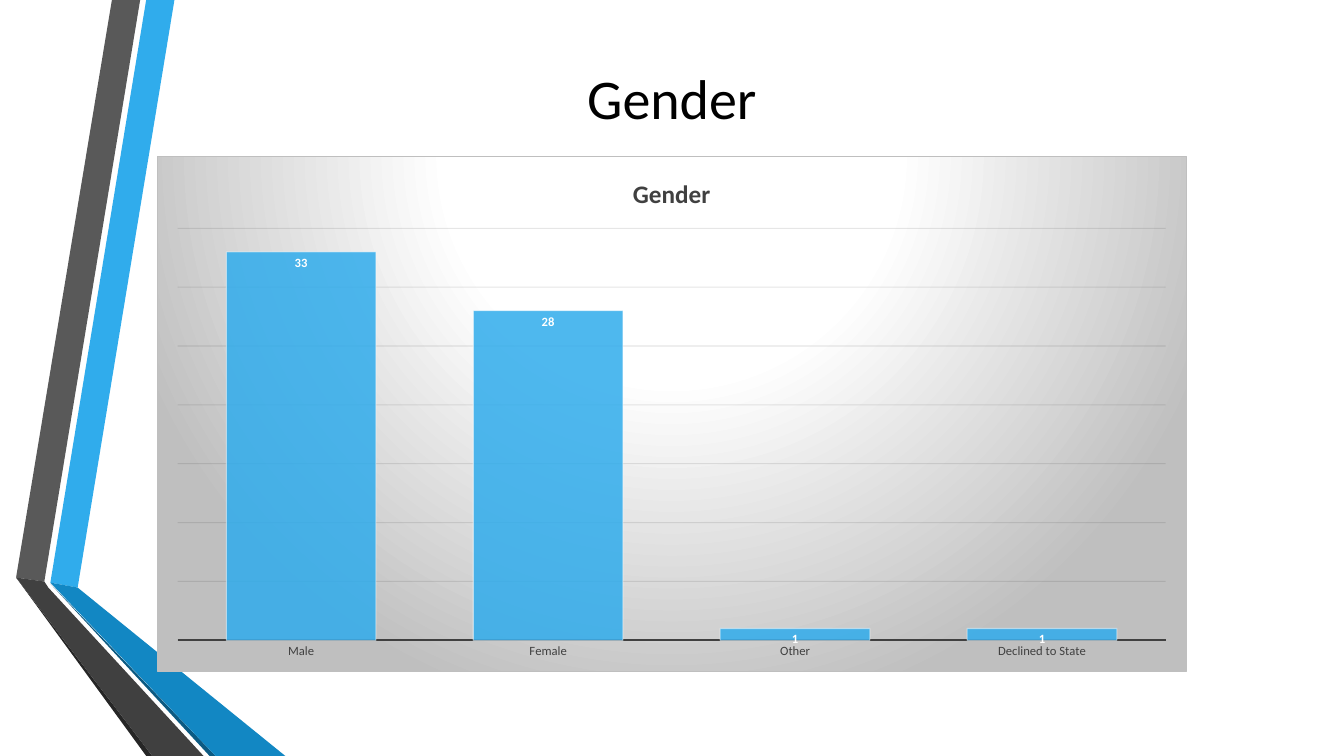
from dataclasses import dataclass

from lxml import etree
from pptx import Presentation
from pptx import util as u
from pptx.chart.data import CategoryChartData
from pptx.dml.color import RGBColor
from pptx.enum import chart as charts
from pptx.enum import text
from pptx.oxml import parse_xml
from pptx.oxml.ns import nsdecls, qn


@dataclass(frozen=True)
class Theme:
    font: str = "Calibri"
    black: str = "000000"
    white: str = "FFFFFF"
    ink: str = "404040"
    grid: str = "0D0D0D"
    silver: str = "BFBFBF"
    blue: str = "30ACEC"
    blue_mid: str = "1287C3"
    blue_dark: str = "0C5A82"
    gray: str = "595959"
    gray_dark: str = "262626"
    heading: int = 40
    chart_title: int = 18
    body: int = 10
    label: int = 9


THEME = Theme()
WIDTH, HEIGHT = u.Inches(13.333), u.Inches(7.5)
COLUMNS = ROWS = 100

RIBBONS = [
    (THEME.blue, [(3.75, 77.07), (5.78, 77.73), (12.98, 0), (10.88, 0)]),
    (THEME.gray, [(10.43, 0), (8.33, 0), (1.2, 76.4), (3.3, 76.93)]),
    (THEME.gray_dark, [(1.2, 76.4), (10.88, 100), (11.33, 100)]),
    (THEME.blue_dark, [(3.75, 77.2), (15.6, 100), (16.05, 100)]),
    (THEME.blue_mid, [(3.75, 77.07), (16.05, 100), (21.23, 100), (5.78, 77.73)]),
    (THEME.ink, [(15.15, 100), (3.6, 77.73), (3.3, 76.93), (1.2, 76.4), (11.33, 100)]),
]


def across(columns):
    return round(WIDTH * columns / COLUMNS)


def down(rows):
    return round(HEIGHT * rows / ROWS)


def place(left, top, width, height):
    return across(left), down(top), across(width), down(height)


def style_font(font, size, color, bold=False):
    font.name = THEME.font
    font.size = u.Pt(size)
    font.bold = bold
    font.color.rgb = RGBColor.from_string(color)


def style_line(line, color, width):
    line.color.rgb = RGBColor.from_string(color)
    line.width = u.Pt(width)


def set_opacity(fill_parent, percent):
    color = fill_parent.find(f"{qn('a:solidFill')}/{qn('a:srgbClr')}")
    etree.SubElement(color, qn("a:alpha")).set("val", str(percent * 1000))


def add_ribbon(page, color, corners):
    points = [(across(column), down(row)) for column, row in corners]
    builder = page.shapes.build_freeform(*points[0])
    builder.add_line_segments(points[1:], close=True)
    ribbon = builder.convert_to_shape()
    ribbon.shadow.inherit = False
    ribbon.fill.solid()
    ribbon.fill.fore_color.rgb = RGBColor.from_string(color)
    ribbon.line.fill.background()


def add_heading(page, words, area):
    box = page.shapes.add_textbox(*place(*area))
    frame = box.text_frame
    frame.word_wrap = True
    frame.vertical_anchor = text.MSO_ANCHOR.MIDDLE
    para = frame.paragraphs[0]
    para.alignment = text.PP_ALIGN.CENTER
    span = para.add_run()
    span.text = words
    style_font(span.font, THEME.heading, THEME.black)


def set_plot_layout(chart, **shares):
    plot_area = chart.plots[0]._element.getparent()
    for layout in plot_area.findall(qn("c:layout")):
        plot_area.remove(layout)
    sizes = "".join(f'<c:{side} val="{share}"/>' for side, share in shares.items())
    plot_area.insert(0, parse_xml(
        f'<c:layout {nsdecls("c")}><c:manualLayout><c:layoutTarget val="inner"/>'
        f'<c:xMode val="edge"/><c:yMode val="edge"/>{sizes}'
        "</c:manualLayout></c:layout>"))


def set_chart_backdrop(chart):
    stops = [(0, THEME.white), (39, THEME.white), (100, THEME.silver)]
    gradient = "".join(
        f'<a:gs pos="{share * 1000}"><a:srgbClr val="{color}"/></a:gs>'
        for share, color in stops)
    backdrop = parse_xml(
        f'<c:spPr {nsdecls("c", "a")}><a:gradFill><a:gsLst>{gradient}</a:gsLst>'
        '<a:path path="circle">'
        '<a:fillToRect l="50000" t="-80000" r="50000" b="180000"/></a:path></a:gradFill>'
        f'<a:ln w="{u.Pt(0.75)}"><a:solidFill><a:srgbClr val="{THEME.silver}"/>'
        "</a:solidFill></a:ln></c:spPr>")
    chart._chartSpace.find(qn("c:chart")).addnext(backdrop)


def style_axes(chart):
    categories, values = chart.category_axis, chart.value_axis
    categories.major_tick_mark = charts.XL_TICK_MARK.NONE
    style_font(categories.tick_labels.font, THEME.label, THEME.ink)
    style_line(categories.format.line, THEME.ink, 1.5)
    values.visible = False
    values.minimum_scale, values.maximum_scale, values.major_unit = 0, 35, 5
    values.has_major_gridlines = True
    gridline = values.major_gridlines.format.line
    style_line(gridline, THEME.grid, 0.75)
    set_opacity(values._element.find(f".//{qn('c:majorGridlines')}//{qn('a:ln')}"), 10)


def style_bars(plot):
    plot.gap_width = 65
    plot.vary_by_categories = False
    bars = plot.series[0]
    bars.format.fill.solid()
    bars.format.fill.fore_color.rgb = RGBColor.from_string(THEME.blue)
    style_line(bars.format.line, THEME.white, 0.75)
    look = bars._element.find(qn("c:spPr"))
    set_opacity(look, 85)
    set_opacity(look.find(qn("a:ln")), 50)
    labels = bars.data_labels
    labels.show_value = True
    labels.position = charts.XL_LABEL_POSITION.INSIDE_END
    style_font(labels.font, THEME.label, THEME.white, bold=True)


def add_column_chart(page, title, counts, area):
    data = CategoryChartData()
    data.categories = list(counts)
    data.add_series("Series 1", list(counts.values()))
    chart = page.shapes.add_chart(
        charts.XL_CHART_TYPE.COLUMN_CLUSTERED, *place(*area), data).chart
    style_font(chart.font, THEME.body, THEME.black)
    chart.has_legend = False
    chart.has_title = True
    span = chart.chart_title.text_frame.paragraphs[0].add_run()
    span.text = title
    style_font(span.font, THEME.chart_title, THEME.ink, bold=True)
    chart.chart_title.include_in_layout = False
    style_axes(chart)
    style_bars(chart.plots[0])
    set_plot_layout(chart, x=0.02, y=0.14, w=0.96, h=0.8)
    set_chart_backdrop(chart)


def main():
    deck = Presentation()
    deck.slide_width, deck.slide_height = WIDTH, HEIGHT
    page = deck.slides.add_slide(deck.slide_layouts[6])
    for color, corners in RIBBONS:
        add_ribbon(page, color, corners)
    add_heading(page, "Gender", (6.9, 4.93, 86.18, 15.73))
    counts = {"Male": 33, "Female": 28, "Other": 1, "Declined to State": 1}
    add_column_chart(page, "Gender", counts, (11.65, 20.6, 76.65, 68.27))
    deck.save("out.pptx")


if __name__ == "__main__":
    main()
